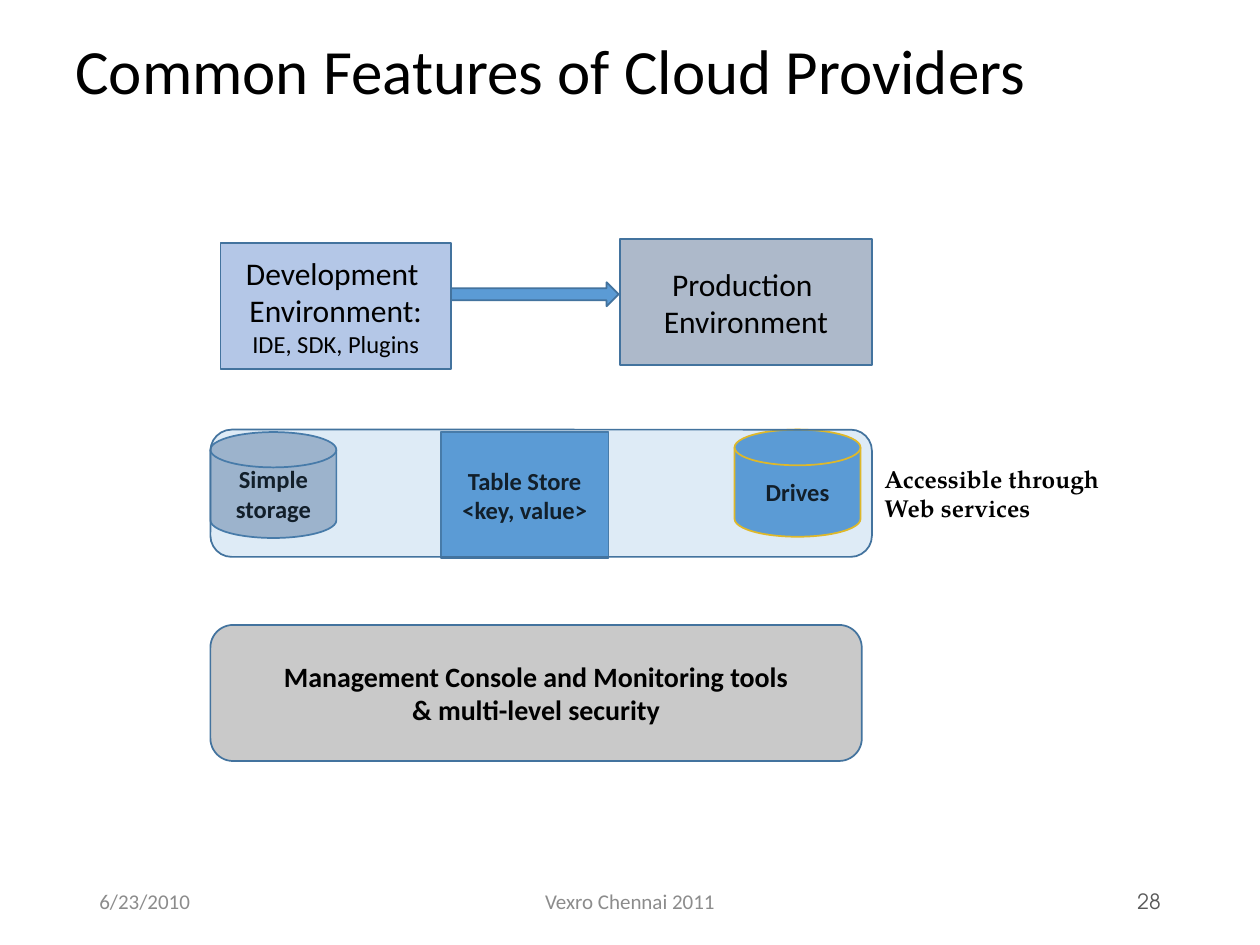
from lxml import etree
from pptx import Presentation
from pptx.dml.color import RGBColor
from pptx.enum.shapes import MSO_SHAPE
from pptx.enum.text import MSO_ANCHOR, PP_ALIGN
from pptx.oxml.ns import qn
from pptx.util import Inches, Pt

RECT, ROUNDED = MSO_SHAPE.RECTANGLE, MSO_SHAPE.ROUNDED_RECTANGLE
DISK, ARROW = MSO_SHAPE.FLOWCHART_MAGNETIC_DISK, MSO_SHAPE.RIGHT_ARROW
LEFT, CENTER, RIGHT = PP_ALIGN.LEFT, PP_ALIGN.CENTER, PP_ALIGN.RIGHT
MIDDLE, TOP = MSO_ANCHOR.MIDDLE, MSO_ANCHOR.TOP

COLORS = {
    "black": "000000", "outline": "43739E", "gold": "FFC000",
    "periwinkle": "B4C7E7", "slate": "ADB9CA", "blue": "5B9BD5",
    "silver": "C9C9C9", "footer": "8C8C8C", "number": "595959",
}


def write(shape, paragraphs, size, color="black", font="Calibri", bold=False,
          align=CENTER, anchor=MIDDLE, wrap=True, spacing=1.0):
    """Fill a shape with paragraphs, each a list of (text, size or None) runs."""
    frame = shape.text_frame
    frame.word_wrap, frame.vertical_anchor = wrap, anchor
    for index, runs in enumerate(paragraphs):
        paragraph = frame.paragraphs[0] if index == 0 else frame.add_paragraph()
        paragraph.alignment, paragraph.line_spacing = align, spacing
        for text, run_size in runs:
            run = paragraph.add_run()
            run.text = text
            run.font.color.rgb = RGBColor.from_string(COLORS[color])
            values = {"name": font, "size": Pt(run_size or size), "bold": bold}
            for name, value in values.items():
                setattr(run.font, name, value)


def add_block(kind, box, fill, line="outline"):
    """Add a filled, outlined preset shape without a shadow."""
    block = slide.shapes.add_shape(kind, *map(Inches, box))
    block.shadow.inherit = False
    block.fill.solid()
    block.fill.fore_color.rgb = RGBColor.from_string(COLORS[fill])
    block.line.color.rgb = RGBColor.from_string(COLORS[line])
    block.line.width = Pt(1)
    return block


prs = Presentation()
prs.slide_width, prs.slide_height = Inches(10), Inches(7.5)
slide = prs.slides.add_slide(prs.slide_layouts[6])

# Title
title = slide.shapes.add_textbox(Inches(0.5), Inches(0), Inches(9), Inches(1.17))
write(title, [[("Common Features of Cloud Providers", None)]], 36,
      align=LEFT, spacing=0.9)

# Environments and the arrow between them
development = add_block(RECT, (1.75, 1.93, 1.83, 1), "periwinkle")
write(development, [[("Development ", None)],
                    [("Environment: ", None), ("IDE, SDK, Plugins", 14)]], 18)
production = add_block(RECT, (4.92, 1.9, 2, 1), "slate")
write(production, [[("Production ", None)], [("Environment", None)]], 18)
add_block(ARROW, (3.58, 2.24, 1.33, 0.19), "blue")

# Storage services
stores = [
    (DISK, (1.67, 3.43, 1, 0.84), "slate", "outline", ["Simple", "storage"]),
    (RECT, (3.5, 3.43, 1.33, 1), "blue", "outline", ["Table Store <key, value>"]),
    (DISK, (5.83, 3.41, 1, 0.85), "blue", "gold", ["Drives"]),
]
for kind, box, fill, line, lines in stores:
    store = add_block(kind, box, fill, line)
    write(store, [[(text, None)] for text in lines], 14, bold=True)

# Translucent band laid over the storage services
band = add_block(ROUNDED, (1.67, 3.41, 5.25, 1.01), "blue")
band_color = band._element.spPr.find(qn("a:solidFill")).find(qn("a:srgbClr"))
etree.SubElement(band_color, qn("a:alpha"), val="20000")

access = slide.shapes.add_textbox(Inches(6.92), Inches(3.63), Inches(1.97), Inches(0.57))
write(access, [[("Accessible through", None)], [("Web services", None)]], 14,
      font="TeX Gyre Pagella", bold=True, align=LEFT, anchor=TOP, wrap=False)

# Management layer
management = add_block(ROUNDED, (1.67, 4.96, 5.17, 1.08), "silver")
write(management, [[("Management Console and Monitoring tools", None)],
                   [("& multi-level security", None)]], 16, bold=True)

# Footer
footers = [
    (0.69, 2.25, "6/23/2010", LEFT, "footer", "Calibri"),
    (3.31, 3.38, "Vexro Chennai 2011", CENTER, "footer", "Calibri"),
    (7.06, 2.25, "28", RIGHT, "number", "TeX Gyre Adventor"),
]
for left, width, text, align, color, font in footers:
    footer = slide.shapes.add_textbox(Inches(left), Inches(6.95), Inches(width), Inches(0.4))
    write(footer, [[(text, None)]], 12, color=color, font=font, align=align)

prs.save("out.pptx")
